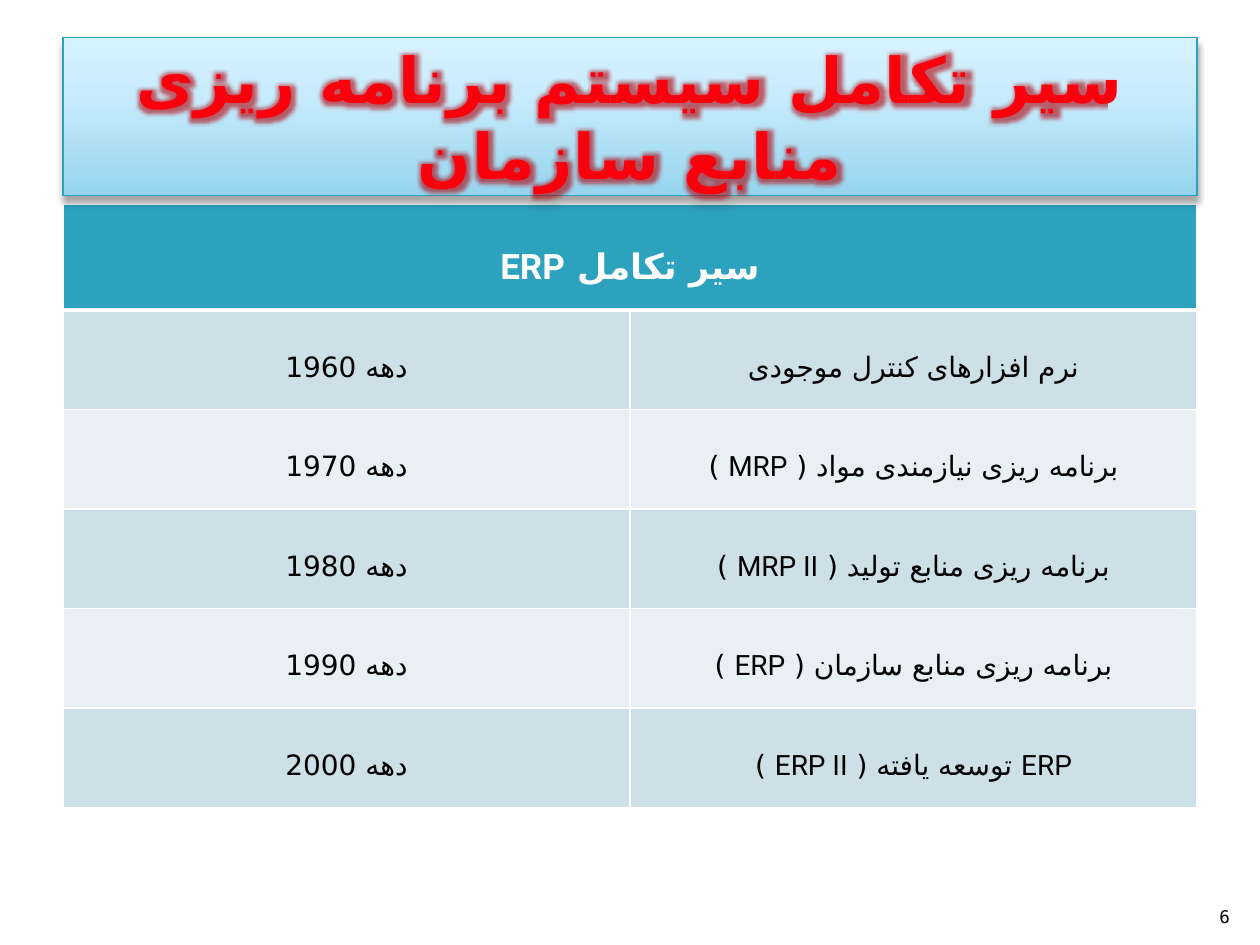
from dataclasses import dataclass

from lxml.etree import SubElement
from pptx import Presentation
from pptx.dml.color import RGBColor
from pptx.enum.shapes import MSO_SHAPE
from pptx.enum.text import MSO_ANCHOR, PP_ALIGN
from pptx.oxml import parse_xml
from pptx.oxml.ns import nsdecls, qn
from pptx.util import Inches, Pt


@dataclass(frozen=True)
class Theme:
    font: str = "Roboto"
    arabic_font: str = "DejaVu Sans"
    number_font: str = "DejaVu Sans Mono"
    accent: str = "2DA2BF"
    bands: tuple = ("CDE0E8", "E8F0F4")
    white: str = "FFFFFF"
    black: str = "000000"
    glow: str = "B00008"
    title_fill: tuple = ((0, "96D4EE"), (65, "C9ECFC"), (100, "D7F2FF"))
    title_text: tuple = ((25, "F9000C"), (100, "B00008"))
    title_size: int = 36
    header_size: int = 20
    body_size: int = 16
    number_size: int = 10


THEME = Theme()
TITLE = "سیر تکامل سیستم برنامه ریزی منابع سازمان"
HEADER = "سیر تکامل ERP"
DECADE = "دهه "
STAGES = (
    ("1960", "نرم افزارهای کنترل موجودی"),
    ("1970", "برنامه ریزی نیازمندی مواد ( MRP )"),
    ("1980", "برنامه ریزی منابع تولید ( MRP II )"),
    ("1990", "برنامه ریزی منابع سازمان ( ERP )"),
    ("2000", "ERP توسعه یافته ( ERP II )"),
)


def rgb(color):
    return RGBColor.from_string(color)


def set_gradient(fill, parent, stops, angle):
    fill.gradient()
    grad = parent.find(qn("a:gradFill"))
    gs_list = "".join(
        f'<a:gs pos="{pos * 1000}"><a:srgbClr val="{color}"/></a:gs>'
        for pos, color in stops
    )
    grad.getparent().replace(grad, parse_xml(
        f'<a:gradFill {nsdecls("a")} rotWithShape="1"><a:gsLst>{gs_list}</a:gsLst>'
        f'<a:lin ang="{angle * 60000}" scaled="0"/></a:gradFill>'
    ))


def add_run(p, text, font, size, color=None, bold=False):
    r = p.add_run()
    r.text = text
    r.font.name = font
    r.font.size = Pt(size)
    r.font.bold = bold
    if color:
        r.font.color.rgb = rgb(color)
    return r


def add_arabic_run(p, text, size, color=None, bold=False):
    r = add_run(p, text, THEME.font, size, color, bold)
    SubElement(r._r.get_or_add_rPr(), qn("a:cs"), typeface=THEME.arabic_font)
    return r


def add_title(s):
    sp = s.shapes.add_shape(
        MSO_SHAPE.RECTANGLE, Inches(0.5), Inches(0.3), Inches(9), Inches(1.25)
    )
    sp.shadow.inherit = False
    spPr = sp._element.spPr
    set_gradient(sp.fill, spPr, THEME.title_fill, 270)
    sp.line.color.rgb = rgb(THEME.accent)
    sp.line.width = Pt(0.75)
    spPr.find(qn("a:effectLst")).append(parse_xml(
        f'<a:outerShdw {nsdecls("a")} blurRad="{Pt(4)}" dist="{Pt(3)}" dir="5400000" '
        f'rotWithShape="0"><a:srgbClr val="{THEME.black}"><a:alpha val="35000"/>'
        '</a:srgbClr></a:outerShdw>'
    ))
    tf = sp.text_frame
    tf.word_wrap = True
    tf.vertical_anchor = MSO_ANCHOR.MIDDLE
    p = tf.paragraphs[0]
    p.alignment = PP_ALIGN.CENTER
    r = add_arabic_run(p, TITLE, THEME.title_size, bold=True)
    rPr = r._r.get_or_add_rPr()
    rPr.set("spc", "50")
    set_gradient(r.font.fill, rPr, THEME.title_text, 90)
    rPr.find(qn("a:gradFill")).addnext(parse_xml(
        f'<a:effectLst {nsdecls("a")}><a:glow rad="{Pt(10)}">'
        f'<a:srgbClr val="{THEME.glow}"><a:alpha val="60000"/></a:srgbClr>'
        '</a:glow></a:effectLst>'
    ))


def set_borders(cell, bottom):
    tcPr = cell._tc.get_or_add_tcPr()
    for i, (side, width) in enumerate(
        (("L", 1), ("R", 1), ("T", 1), ("B", bottom))
    ):
        tcPr.insert(i, parse_xml(
            f'<a:ln{side} {nsdecls("a")} w="{Pt(width)}"><a:solidFill>'
            f'<a:srgbClr val="{THEME.white}"/></a:solidFill></a:ln{side}>'
        ))


def format_cell(cell, fill, bottom=1):
    cell.fill.solid()
    cell.fill.fore_color.rgb = rgb(fill)
    set_borders(cell, bottom)
    cell.vertical_anchor = MSO_ANCHOR.MIDDLE
    p = cell.text_frame.paragraphs[0]
    p.alignment = PP_ALIGN.CENTER
    p.line_spacing = 1.5
    p._p.get_or_add_pPr().set("rtl", "1")
    return p


def add_stage_table(s):
    table = s.shapes.add_table(
        len(STAGES) + 1, 2, Inches(0.5), Inches(1.62), Inches(9), Inches(4.79)
    ).table
    for i, row in enumerate(table.rows):
        row.height = Inches(0.79 if i else 0.84)
    header = table.cell(0, 0)
    header.merge(table.cell(0, 1))
    p = format_cell(header, THEME.accent, bottom=3)
    add_arabic_run(p, HEADER, THEME.header_size, THEME.white, True)
    for i, (year, stage) in enumerate(STAGES):
        band = THEME.bands[i % 2]
        p = format_cell(table.cell(i + 1, 0), band)
        add_arabic_run(p, DECADE, THEME.body_size, THEME.black)
        add_run(p, year, THEME.font, THEME.body_size, THEME.black)
        p = format_cell(table.cell(i + 1, 1), band)
        add_arabic_run(p, stage, THEME.body_size, THEME.black)


def add_slide_number(s):
    tf = s.shapes.add_textbox(
        Inches(9.46), Inches(7.01), Inches(0.4), Inches(0.4)
    ).text_frame
    tf.word_wrap = True
    tf.vertical_anchor = MSO_ANCHOR.BOTTOM
    p = tf.paragraphs[0]
    p.alignment = PP_ALIGN.RIGHT
    add_run(p, "6", THEME.number_font, THEME.number_size, THEME.black)


def main():
    prs = Presentation()
    prs.slide_width = Inches(10)
    prs.slide_height = Inches(7.5)
    s = prs.slides.add_slide(prs.slide_layouts[6])
    add_stage_table(s)
    add_slide_number(s)
    add_title(s)
    prs.save("out.pptx")


if __name__ == "__main__":
    main()
